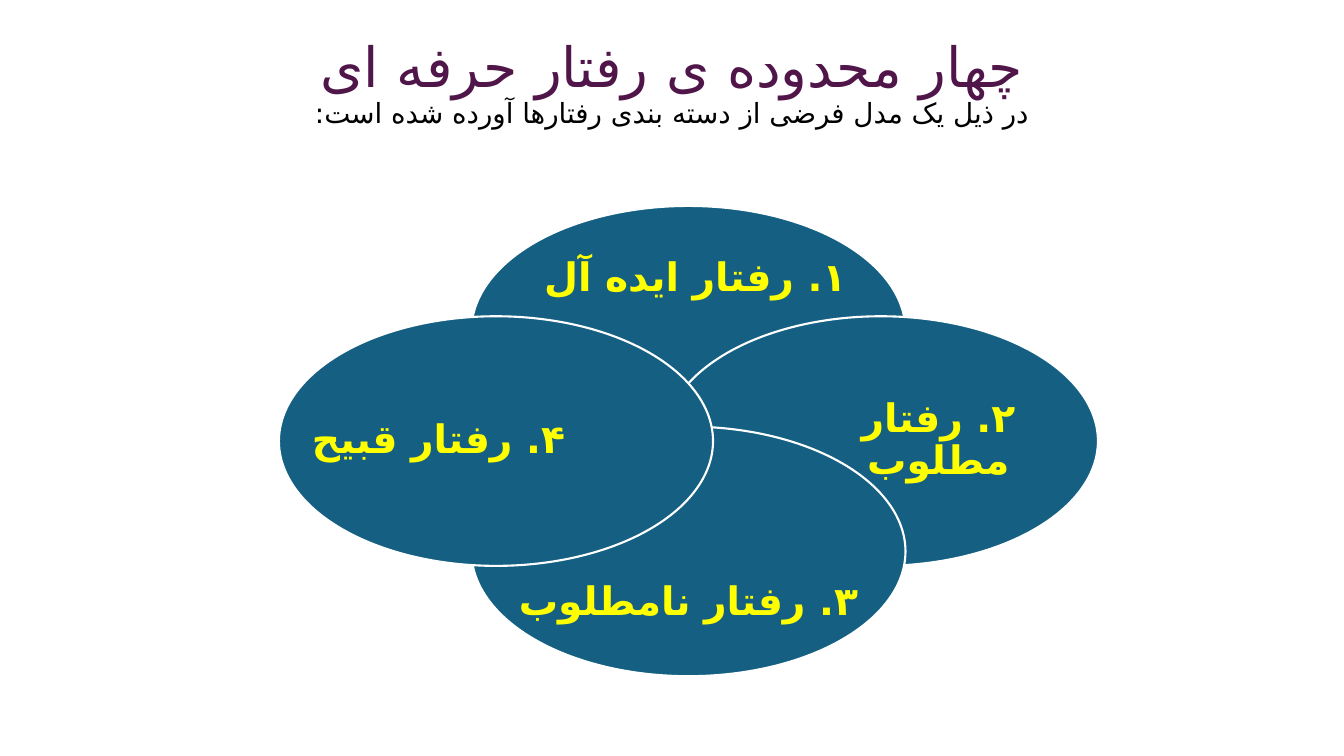
from pptx import Presentation
from pptx import util as u
from pptx.dml.color import RGBColor
from pptx.enum import shapes, text
from pptx.oxml.ns import qn
from lxml import etree

FONT, PERSIAN_FONT = "Lato", "DejaVu Sans"
WHITE, BLACK, PURPLE, BLUE, YELLOW = "FFFFFF", "000000", "501549", "156082", "FFFF00"


def color(hex_string):
    return RGBColor.from_string(hex_string)


def set_fill(shape, hex_string):
    shape.fill.solid()
    shape.fill.fore_color.rgb = color(hex_string)


def set_insets(frame, left=0, top=0, right=0, bottom=0):
    frame.margin_left, frame.margin_top = u.Cm(left), u.Cm(top)
    frame.margin_right, frame.margin_bottom = u.Cm(right), u.Cm(bottom)


def format_paragraph(paragraph, size, hex_string, bold=False):
    """Centred right-to-left text with a font for Latin and one for Persian letters."""
    paragraph.alignment = text.PP_ALIGN.CENTER
    paragraph.line_spacing = 0.9
    paragraph._p.get_or_add_pPr().set("rtl", "1")
    for run in paragraph.runs:
        run.font.name = FONT
        run.font.size = u.Pt(size)
        run.font.bold = bold
        run.font.color.rgb = color(hex_string)
        latin = run._r.get_or_add_rPr().find(qn("a:latin"))
        latin.addnext(etree.Element(qn("a:cs"), typeface=PERSIAN_FONT))


def add_heading(slide, left, top, width, height):
    title = slide.shapes.title
    title.left, title.top = u.Cm(left), u.Cm(top)
    title.width, title.height = u.Cm(width), u.Cm(height)
    set_fill(title, WHITE)
    frame = title.text_frame
    frame.text = "چهار محدوده ی رفتار حرفه ای\nدر ذیل یک مدل فرضی از دسته بندی رفتارها آورده شده است:"
    frame.auto_size = text.MSO_AUTO_SIZE.NONE
    frame.vertical_anchor = text.MSO_ANCHOR.TOP
    set_insets(frame, left=0.25, right=0.25)
    heading, subheading = frame.paragraphs
    format_paragraph(heading, 39.6, PURPLE)
    format_paragraph(subheading, 19.8, BLACK)


def add_behaviour_diagram(slide, left, top, width, height):
    """Four overlapping ovals around the centre of the box."""
    oval_width, oval_height = 10.94, 6.29
    step_x, step_y = (width - oval_width) / 2, (height - oval_height) / 2
    # Label, column and row of the oval, insets that push the label outwards, wrapping
    behaviours = [
        ("۱. رفتار ایده آل ", 1, 0, {"bottom": 2.6}, False),
        ("۲. رفتار مطلوب", 2, 1, {"left": 2.9}, True),
        ("۳. رفتار نامطلوب", 1, 2, {"top": 2.6}, False),
        ("۴. رفتار قبیح", 0, 1, {"right": 2.9}, False),
    ]
    for label, column, row, insets, wraps in behaviours:
        oval = slide.shapes.add_shape(
            shapes.MSO_SHAPE.OVAL,
            u.Cm(left + column * step_x), u.Cm(top + row * step_y),
            u.Cm(oval_width), u.Cm(oval_height))
        oval.shadow.inherit = False
        set_fill(oval, BLUE)
        oval.line.color.rgb = color(WHITE)
        oval.line.width = u.Pt(1.5)
        frame = oval.text_frame
        frame.text = label
        frame.word_wrap = wraps
        frame.vertical_anchor = text.MSO_ANCHOR.MIDDLE
        set_insets(frame, **insets)
        format_paragraph(frame.paragraphs[0], 28, YELLOW, bold=True)


def main():
    presentation = Presentation()
    presentation.slide_width, presentation.slide_height = u.Cm(33.87), u.Cm(19.05)
    slide = presentation.slides.add_slide(presentation.slide_layouts[5])
    add_heading(slide, 2.33, 1.01, 29.21, 3.68)
    add_behaviour_diagram(slide, 7.03, 5.19, 20.64, 11.85)
    presentation.save("out.pptx")


if __name__ == "__main__":
    main()
